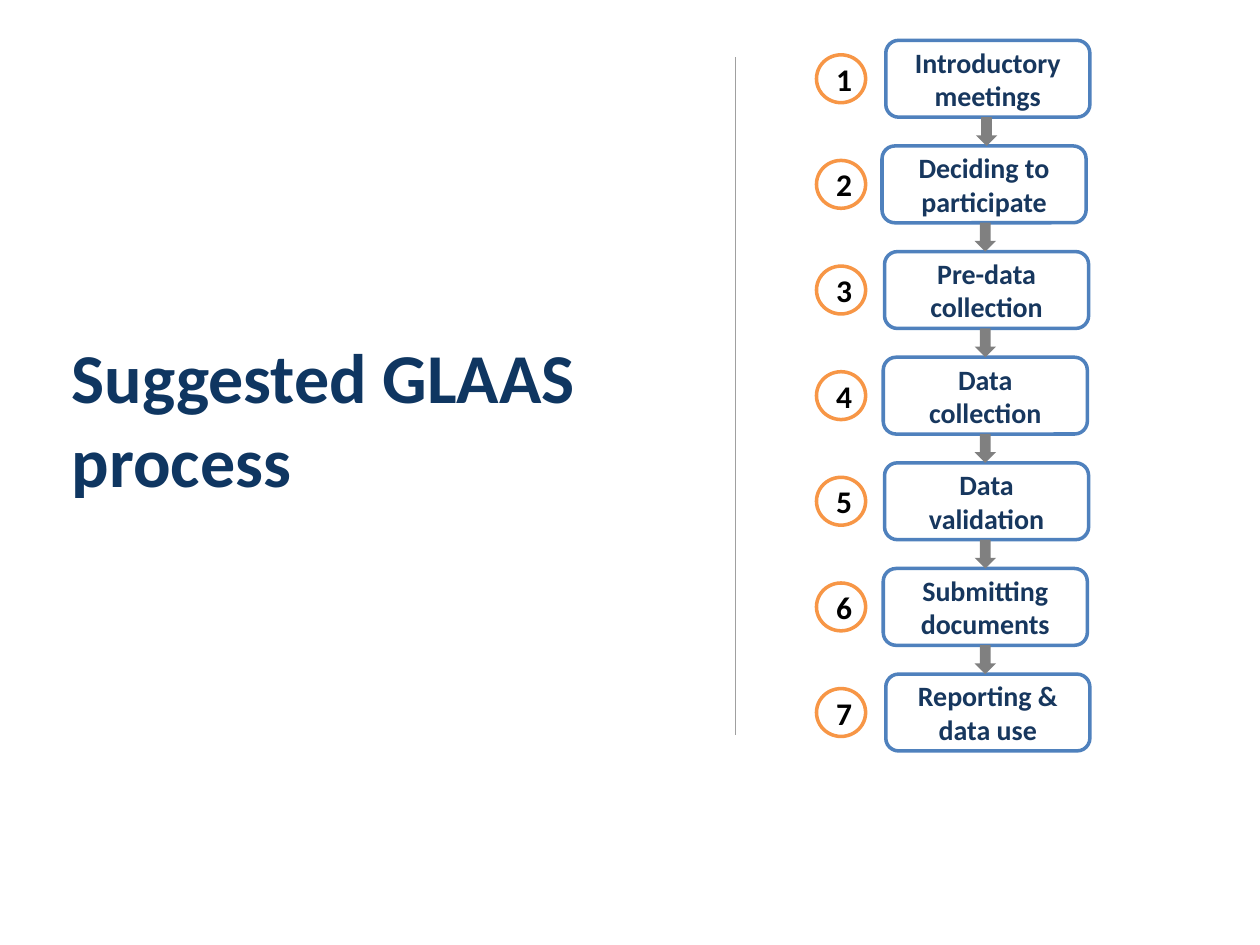
from dataclasses import dataclass

from lxml.etree import SubElement
from pptx import Presentation
from pptx.dml.color import RGBColor
from pptx.enum.shapes import MSO_CONNECTOR, MSO_SHAPE
from pptx.enum.text import MSO_ANCHOR, PP_ALIGN
from pptx.oxml.ns import qn
from pptx.util import Inches, Pt


@dataclass(frozen=True)
class Theme:
    font: str = "Calibri"
    title_color: str = "0F3661"
    step_color: str = "17375E"
    number_color: str = "000000"
    surface: str = "FFFFFF"
    step_border: str = "4F81BD"
    number_border: str = "F79646"
    arrow_color: str = "808080"
    divider_color: str = "A0A0A0"
    title_size: int = 40
    step_size: int = 16
    number_size: int = 18
    border_width: float = 2
    divider_width: float = 0.5


STEPS = [
    ("Introductory meetings", 7.03),
    ("Deciding to participate", 7.00),
    ("Pre-data collection", 7.02),
    ("Data collection", 7.01),
    ("Data validation", 7.02),
    ("Submitting documents", 7.01),
    ("Reporting & data use", 7.03),
]
FIRST_TOP, LAST_TOP = 0.32, 5.35
STEP_PITCH = (LAST_TOP - FIRST_TOP) / (len(STEPS) - 1)
STEP_WIDTH, STEP_HEIGHT = 1.62, 0.61
NUMBER_LEFT, NUMBER_WIDTH, NUMBER_HEIGHT = 6.48, 0.39, 0.38
ARROW_LENGTH, ARROW_BREADTH = 0.23, 0.17


class ProcessSlide:
    def __init__(self, deck, theme):
        self.theme = theme
        self.page = deck.slides.add_slide(deck.slide_layouts[5])

    def set_text(self, frame, text, *, size, color, align):
        frame.word_wrap = True
        frame.vertical_anchor = MSO_ANCHOR.MIDDLE
        para = frame.paragraphs[0]
        para.alignment = align
        span = para.add_run()
        span.text = text
        span.font.name = self.theme.font
        span.font.size = Pt(size)
        span.font.bold = True
        span.font.color.rgb = RGBColor.from_string(color)

    def title(self, text, left, top, width, height):
        box = self.page.shapes.title
        box.left, box.top = Inches(left), Inches(top)
        box.width, box.height = Inches(width), Inches(height)
        self.set_text(box.text_frame, text, size=self.theme.title_size,
                      color=self.theme.title_color, align=PP_ALIGN.LEFT)

    def divider(self, x, top, bottom):
        line = self.page.shapes.add_connector(
            MSO_CONNECTOR.STRAIGHT, Inches(x), Inches(bottom), Inches(x), Inches(top))
        line.line.color.rgb = RGBColor.from_string(self.theme.divider_color)
        line.line.width = Pt(self.theme.divider_width)
        SubElement(line._element.spPr, qn("a:effectLst"))

    def shape(self, kind, left, top, width, height, *, fill, border=None):
        box = self.page.shapes.add_shape(
            kind, Inches(left), Inches(top), Inches(width), Inches(height))
        box.shadow.inherit = False
        box.fill.solid()
        box.fill.fore_color.rgb = RGBColor.from_string(fill)
        if border:
            box.line.color.rgb = RGBColor.from_string(border)
            box.line.width = Pt(self.theme.border_width)
        else:
            box.line.fill.background()
        return box

    def step(self, text, left, top):
        box = self.shape(MSO_SHAPE.ROUNDED_RECTANGLE, left, top, STEP_WIDTH, STEP_HEIGHT,
                         fill=self.theme.surface, border=self.theme.step_border)
        self.set_text(box.text_frame, text, size=self.theme.step_size,
                      color=self.theme.step_color, align=PP_ALIGN.CENTER)

    def number(self, value, top):
        circle = self.shape(MSO_SHAPE.OVAL, NUMBER_LEFT, top, NUMBER_WIDTH, NUMBER_HEIGHT,
                            fill=self.theme.surface, border=self.theme.number_border)
        frame = circle.text_frame
        frame.margin_left = Inches(0.05)
        frame.margin_right = frame.margin_top = frame.margin_bottom = 0
        self.set_text(frame, str(value), size=self.theme.number_size,
                      color=self.theme.number_color, align=PP_ALIGN.CENTER)

    def down_arrow(self, center_x, center_y):
        arrow = self.shape(
            MSO_SHAPE.RIGHT_ARROW, center_x - ARROW_LENGTH / 2, center_y - ARROW_BREADTH / 2,
            ARROW_LENGTH, ARROW_BREADTH, fill=self.theme.arrow_color)
        arrow.rotation = 90


def main():
    deck = Presentation()
    deck.slide_width, deck.slide_height = Inches(10), Inches(7.5)
    slide = ProcessSlide(deck, Theme())
    slide.title("Suggested GLAAS process", 0.47, 2.18, 5.22, 2.27)
    slide.divider(5.84, 0.45, 5.83)

    tops = [FIRST_TOP + index * STEP_PITCH for index in range(len(STEPS))]
    for (text, left), top in zip(STEPS, tops):
        slide.step(text, left, top)
    for index, top in enumerate(tops[:-1]):
        center_x = 7.83 if index == 0 else 7.82
        slide.down_arrow(center_x, top + (STEP_HEIGHT + STEP_PITCH) / 2)
    for value, top in enumerate(tops, start=1):
        slide.number(value, top + (STEP_HEIGHT - NUMBER_HEIGHT) / 2)

    deck.save("out.pptx")


if __name__ == "__main__":
    main()
